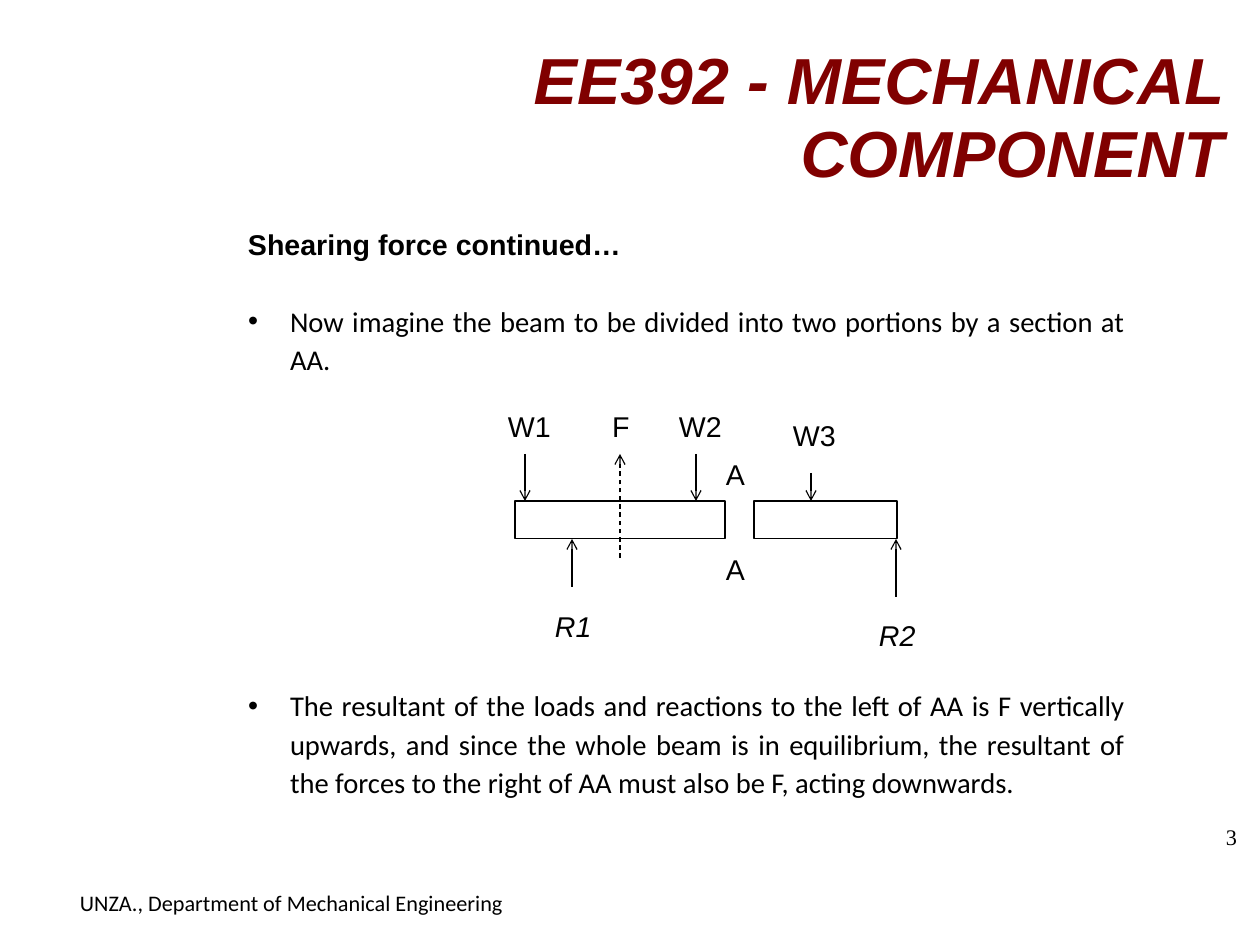
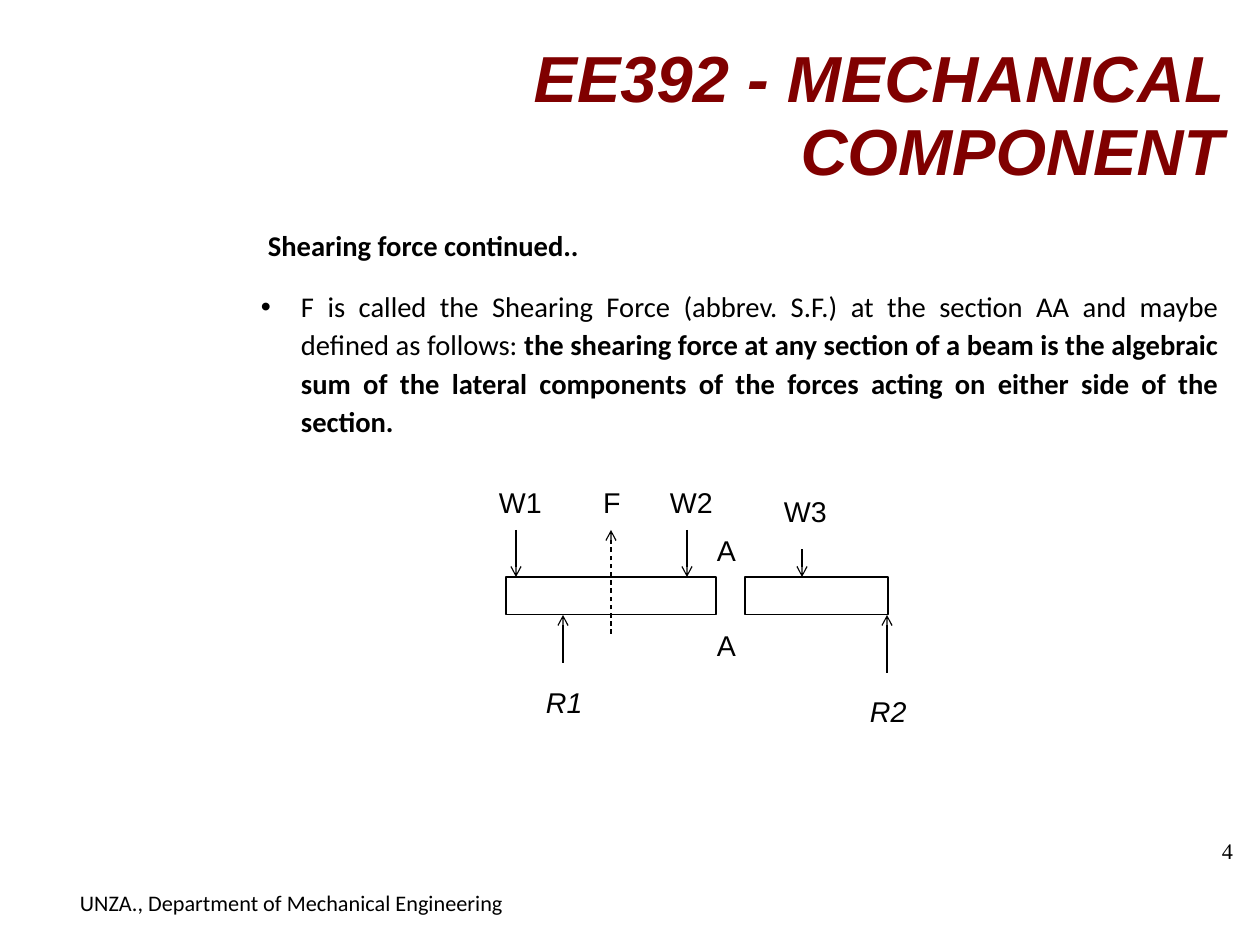
from lxml.etree import SubElement
from pptx import Presentation
from pptx.dml.color import RGBColor
from pptx.enum.dml import MSO_LINE
from pptx.enum.shapes import MSO_CONNECTOR, MSO_SHAPE
from pptx.enum.text import MSO_ANCHOR, MSO_AUTO_SIZE, PP_ALIGN
from pptx.oxml.ns import qn
from pptx.util import Emu, Pt

COURSE = "EE392 - MECHANICAL COMPONENT"
DEPARTMENT = "UNZA., Department of Mechanical Engineering"

FORCE_LABELS = [
    ("W1", -18, -95, 77),
    ("F", 86, -95, 48),
    ("R1", 29, 105, 77),
    ("W2", 153, -95, 66),
    ("W3", 267, -86, 77),
    ("R2", 353, 114, 77),
    ("A", 200, -47, 48),
    ("A", 200, 48, 77),
]
FORCE_ARROWS = [
    (57, 86, 38),
    (10, -47, 0),
    (181, -47, 0),
    (296, -28, 0),
    (381, 96, 38),
]
BEAM_PORTIONS = [(0, 210), (239, 143)]
BEAM_HEIGHT = 38


def px(length):
    return Emu(length * 8000)


class Deck:
    COLORS = {"title": "800000", "ink": "000000", "paper": "FFFFFF"}

    def __init__(self):
        self.prs = Presentation()
        self.prs.slide_width = px(1260)
        self.prs.slide_height = px(945)
        self.slide = None

    def color(self, role):
        return RGBColor.from_string(self.COLORS[role])

    def frame(self, shape, insets=(0, 0, 0, 0), anchor=MSO_ANCHOR.TOP):
        frame = shape.text_frame
        frame.word_wrap = True
        frame.auto_size = MSO_AUTO_SIZE.NONE
        frame.vertical_anchor = anchor
        frame.margin_left, frame.margin_top, frame.margin_right, frame.margin_bottom = map(px, insets)
        return frame

    def style(self, paragraph, size, font, spacing, align=PP_ALIGN.LEFT,
              role="ink", bold=False, italic=False):
        paragraph.alignment = align
        paragraph.line_spacing = spacing
        for run in paragraph.runs:
            run.font.size = Pt(size)
            run.font.name = font
            run.font.bold = bold
            run.font.italic = italic
            run.font.color.rgb = self.color(role)

    def text_box(self, left, top, width, height, insets=(0, 0, 0, 0)):
        box = self.slide.shapes.add_textbox(*map(px, (left, top, width, height)))
        return self.frame(box, insets)

    def page(self, number, number_left, number_top, title_inset):
        self.slide = self.prs.slides.add_slide(self.prs.slide_layouts[5])
        title = self.slide.shapes.title
        title.left, title.top, title.width, title.height = map(px, (455, 38, 769, 158))
        heading = self.frame(title, (0, title_inset, 0, 0), MSO_ANCHOR.MIDDLE)
        heading.text = COURSE
        self.style(heading.paragraphs[0], 41, "Arial", 0.93, PP_ALIGN.RIGHT,
                   "title", bold=True, italic=True)

        page_number = self.text_box(number_left, number_top, 293, 64)
        page_number.text = number
        self.style(page_number.paragraphs[0], 14, "Times New Roman", 0.95, PP_ALIGN.RIGHT)

        footer = self.text_box(69, 880, 606, 49, (11, 6, 11, 6))
        footer.text = DEPARTMENT
        self.style(footer.paragraphs[0], 14, "Calibri", 1.12)

    def body(self, width, height, inset, heading, font, indent):
        frame = self.text_box(247, 221, width, height, (0, inset, 0, 0))
        frame.text = heading
        paragraph = frame.paragraphs[0]
        paragraph._p.get_or_add_pPr().set("marL", str(px(indent)))
        self.style(paragraph, 18, font, 1.12, bold=True)
        return frame

    def bullet(self, frame, text, margin, hanging, space_before, emphasis=None):
        paragraph = frame.add_paragraph()
        properties = paragraph._p.get_or_add_pPr()
        properties.set("marL", str(px(margin)))
        properties.set("indent", str(px(-hanging)))
        SubElement(properties, qn("a:buFont")).set("typeface", "Arial")
        SubElement(properties, qn("a:buChar")).set("char", "•")
        paragraph.text = text
        if emphasis:
            paragraph.add_run().text = emphasis
        self.style(paragraph, 18, "Calibri", 1.12, PP_ALIGN.JUSTIFY)
        if emphasis:
            paragraph.runs[-1].font.bold = True
        paragraph.space_before = Pt(space_before)

    def rectangle(self, left, top, width, height):
        shape = self.slide.shapes.add_shape(
            MSO_SHAPE.RECTANGLE, *map(px, (left, top, width, height)))
        shape.shadow.inherit = False
        return shape

    def beam(self, left, top, width):
        portion = self.rectangle(left, top, width, BEAM_HEIGHT)
        portion.fill.background()
        portion.line.color.rgb = self.color("ink")
        portion.line.width = Pt(0.75)

    def label(self, text, left, top, width):
        plate = self.rectangle(left, top, width, 43)
        plate.fill.solid()
        plate.fill.fore_color.rgb = self.color("paper")
        plate.line.fill.background()
        frame = self.frame(plate, (11, 6, 0, 6))
        frame.text = text
        self.style(frame.paragraphs[0], 18, "Arial", 0.93, italic=text.startswith("R"))

    def arrow(self, x, start, end, dashed=False):
        force = self.slide.shapes.add_connector(
            MSO_CONNECTOR.STRAIGHT, *map(px, (x, start, x, end)))
        force.line.color.rgb = self.color("ink")
        force.line.width = Pt(0.75)
        if dashed:
            force.line.dash_style = MSO_LINE.DASH
        SubElement(force.line._get_or_add_ln(), qn("a:tailEnd")).set("type", "arrow")
        SubElement(force._element.spPr, qn("a:effectLst"))

    def beam_diagram(self, left, top):
        for offset, width in BEAM_PORTIONS:
            self.beam(left + offset, top, width)
        for x, start, end in FORCE_ARROWS:
            self.arrow(left + x, top + start, top + end)
        for text, x, y, width in FORCE_LABELS:
            self.label(text, left + x, top + y, width)
        self.arrow(left + 105, top + 57, top - 47, dashed=True)


def main():
    deck = Deck()

    deck.page("3", 944, 825, title_inset=5)
    section = deck.body(878, 674, 2, "Shearing force continued…", "Arial", 1)
    deck.bullet(section, "Now imagine the beam to be divided into two portions by a section at AA.",
                43, 42, 24)
    deck.bullet(section, "The resultant of the loads and reactions to the left of AA is F vertically "
                "upwards, and since the whole beam is in equilibrium, the resultant of the forces "
                "to the right of AA must also be F, acting downwards.", 43, 42, 194)
    deck.beam_diagram(515, 501)

    deck.page("4", 940, 839, title_inset=0)
    definition = deck.body(972, 475, 3, "Shearing force continued..", "Calibri", 21)
    deck.bullet(definition, "F is called the Shearing Force (abbrev. S.F.) at the section AA and "
                "maybe defined as follows: ", 54, 40, 14.2,
                emphasis="the shearing force at any section of a beam is the algebraic sum of the "
                "lateral components of the forces acting on either side of the section.")
    deck.beam_diagram(506, 577)

    deck.prs.save("out.pptx")


if __name__ == "__main__":
    main()
